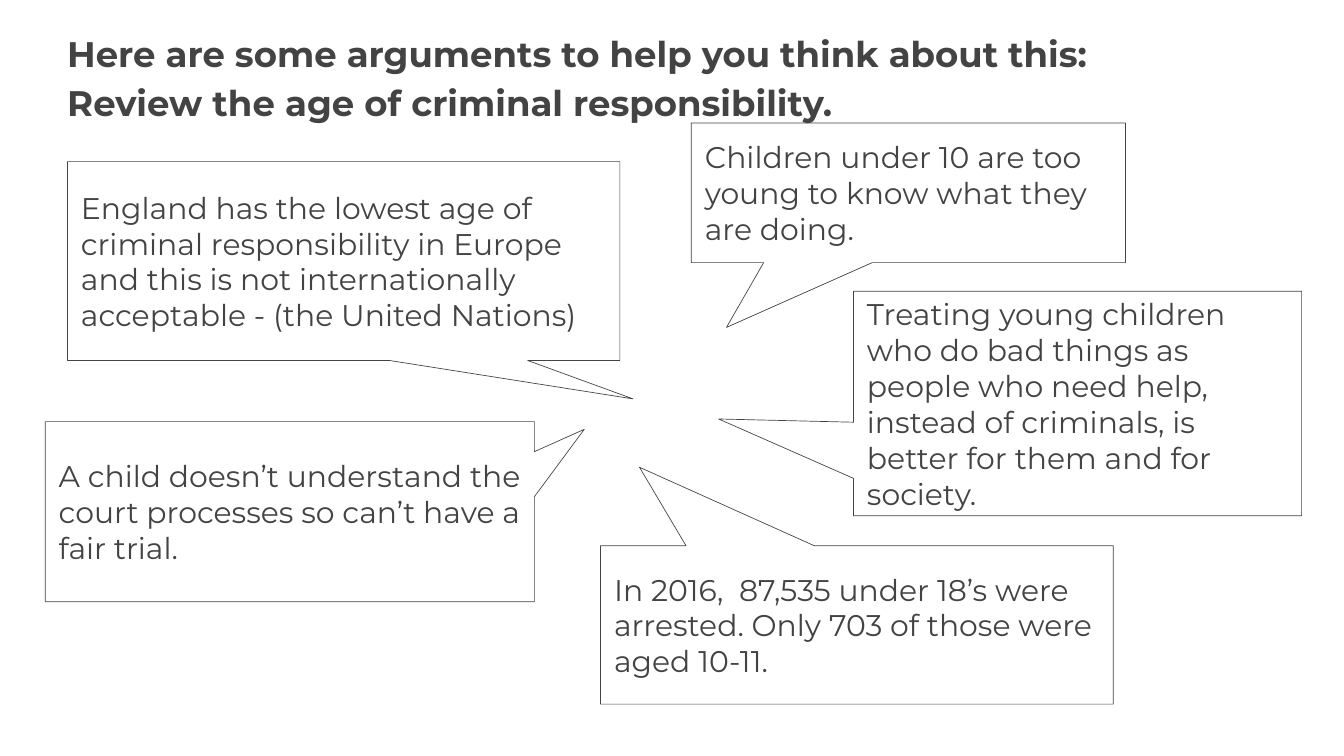
from pptx import Presentation
from pptx.dml.color import RGBColor
from pptx.enum import shapes, text
from pptx.util import Cm, Pt

GREY = RGBColor(0x43, 0x43, 0x43)
FONT = "Montserrat"

TITLE_BOX = (2.54, 0.97, 45.69, 4.52)
TITLE_LINES = [
    "Here are some arguments to help you think about this:",
    "Review the age of criminal responsibility.",
]
LEFT_AND_BOTTOM = [
    ((1.71, 15.94, 18.49, 6.81), (0.602, -0.457),
     "A child doesn’t understand the court processes so can’t have a fair trial."),
    ((2.55, 6.11, 20.88, 7.52), (0.524, 0.693),
     "England has the lowest age of criminal responsibility in Europe and this is "
     "not internationally acceptable - (the United Nations)"),
    ((22.7, 20.63, 19.38, 5.99), (-0.424, -0.995),
     "In 2016,  87,535 under 18’s were arrested. Only 703 of those were aged 10-11."),
]
RIGHT = [
    ((26.13, 4.65, 16.41, 5.28), (-0.419, 0.964),
     "Children under 10 are too young to know what they are doing."),
    ((32.26, 11.01, 16.94, 8.49), (-0.801, 0.069),
     "Treating young children who do bad things as people who need help, instead "
     "of criminals, is better for them and for society."),
]


def set_frame(tf, margin, anchor):
    tf.word_wrap = True
    tf.vertical_anchor = anchor
    tf.margin_left = tf.margin_right = Cm(margin)
    tf.margin_top = tf.margin_bottom = Cm(margin)


def add_run(p, words, size, bold=False):
    p.alignment = text.PP_ALIGN.LEFT
    r = p.add_run()
    r.text = words
    r.font.name = FONT
    r.font.size = Pt(size)
    r.font.bold = bold
    r.font.color.rgb = GREY


def add_title(s, box, lines):
    tf = s.shapes.add_textbox(*map(Cm, box)).text_frame
    set_frame(tf, 0, text.MSO_ANCHOR.TOP)
    for i, line in enumerate(lines):
        p = tf.add_paragraph() if i else tf.paragraphs[0]
        p.line_spacing = 1.15
        add_run(p, line, 38, bold=True)


def add_arguments(s, arguments):
    for box, tip, words in arguments:
        sp = s.shapes.add_shape(shapes.MSO_SHAPE.RECTANGULAR_CALLOUT, *map(Cm, box))
        sp.adjustments[0], sp.adjustments[1] = tip
        sp.shadow.inherit = False
        sp.fill.background()
        sp.line.color.rgb = GREY
        sp.line.width = Pt(0.75)
        set_frame(sp.text_frame, 0.51, text.MSO_ANCHOR.MIDDLE)
        add_run(sp.text_frame.paragraphs[0], words, 32)


def main():
    prs = Presentation()
    prs.slide_width, prs.slide_height = Cm(50.8), Cm(28.58)
    s = prs.slides.add_slide(prs.slide_layouts[6])
    add_arguments(s, LEFT_AND_BOTTOM)
    add_title(s, TITLE_BOX, TITLE_LINES)
    add_arguments(s, RIGHT)
    prs.save("out.pptx")


if __name__ == "__main__":
    main()
